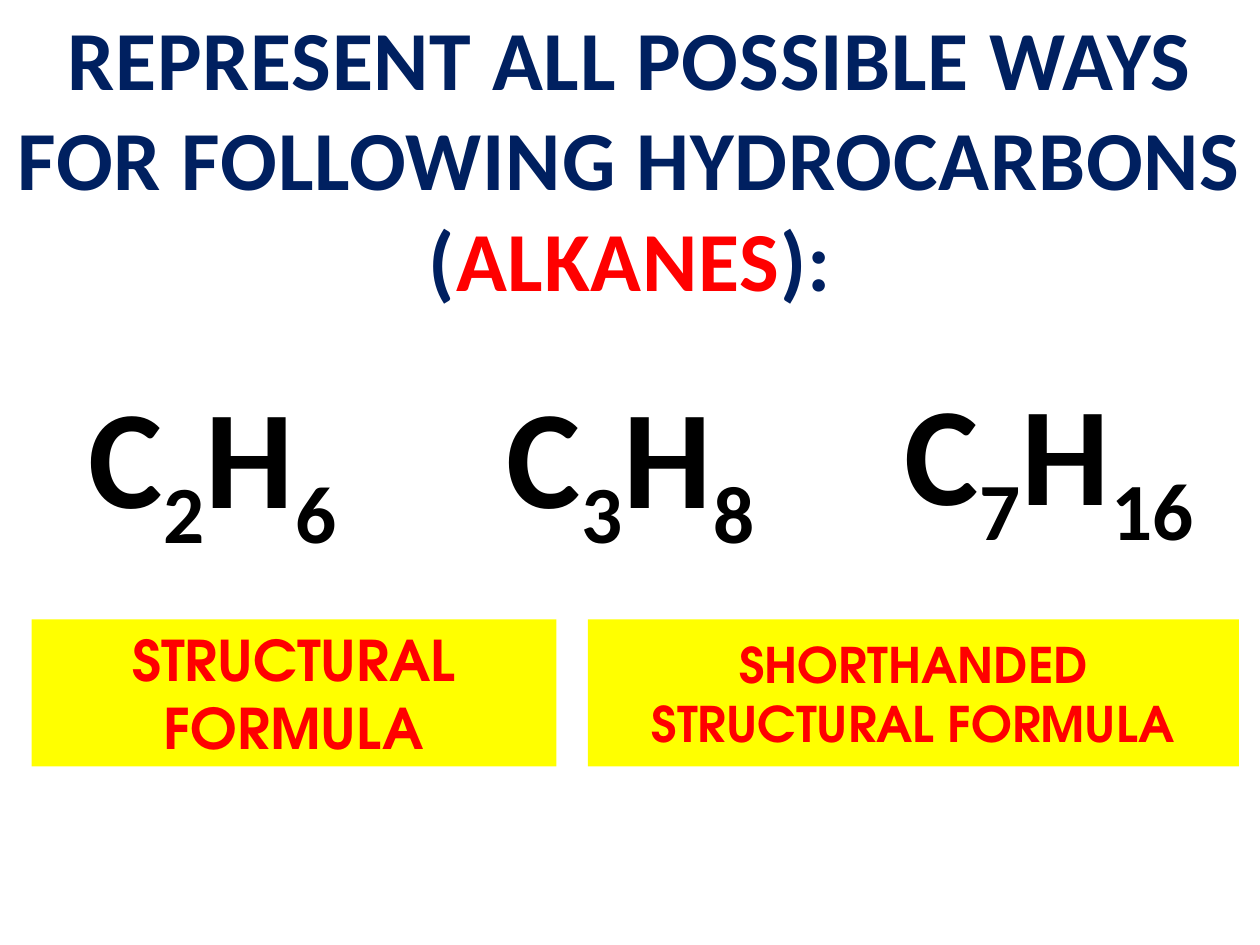
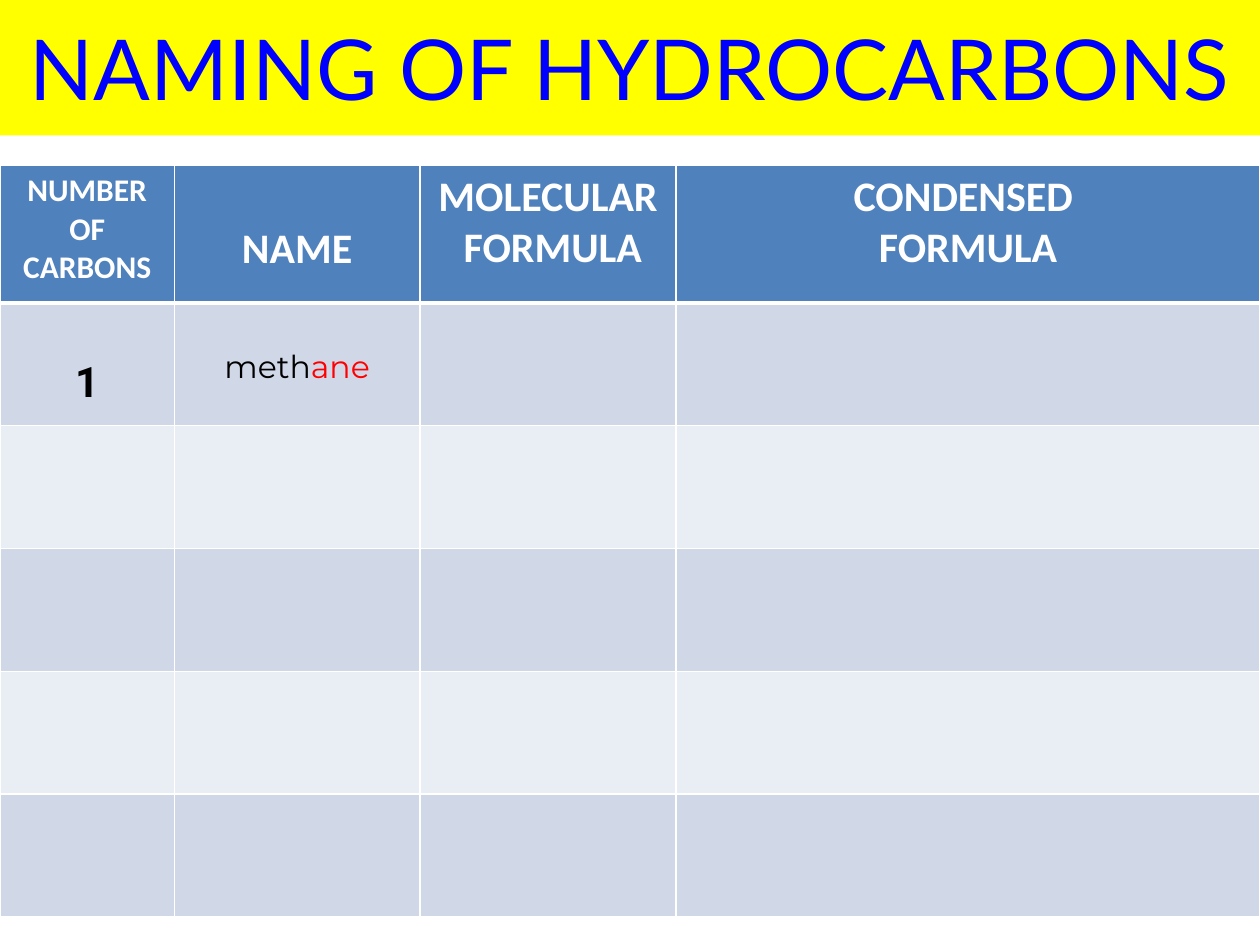
from lxml import etree
from pptx import Presentation
from pptx.dml.color import RGBColor
from pptx.enum.shapes import MSO_SHAPE
from pptx.enum.text import MSO_ANCHOR, MSO_AUTO_SIZE, PP_ALIGN
from pptx.oxml.ns import qn
from pptx.util import Inches, Pt

RECTANGLE = MSO_SHAPE.RECTANGLE
CENTER = PP_ALIGN.CENTER
MIDDLE = MSO_ANCHOR.MIDDLE
FIT_SHAPE = MSO_AUTO_SIZE.SHAPE_TO_FIT_TEXT

NAVY = RGBColor(0x00, 0x20, 0x60)
RED = RGBColor(0xFF, 0x00, 0x00)
BLUE = RGBColor(0x00, 0x00, 0xFF)
BLACK = RGBColor(0x00, 0x00, 0x00)
WHITE = RGBColor(0xFF, 0xFF, 0xFF)
YELLOW = RGBColor(0xFF, 0xFF, 0x00)
HEADER_BLUE = RGBColor(0x4F, 0x81, 0xBD)
BANDS = (RGBColor(0xD0, 0xD8, 0xE8), RGBColor(0xE9, 0xED, 0xF4))

BODY_FONT = "Calibri"
LABEL_FONT = "TeX Gyre Adventor"
BANNER_FONT = "Lato"
GRID_COLUMNS, GRID_ROWS = 120, 90


class Deck:
    """Hold the presentation, its grid and the slide being built."""

    def __init__(self):
        self.presentation = Presentation()
        self.presentation.slide_width = Inches(10)
        self.presentation.slide_height = Inches(7.5)
        self.slide = None

    def new_slide(self):
        self.slide = self.presentation.slides.add_slide(self.presentation.slide_layouts[6])

    def across(self, columns):
        return round(self.presentation.slide_width * columns / GRID_COLUMNS)

    def down(self, rows):
        return round(self.presentation.slide_height * rows / GRID_ROWS)

    def place(self, left, top, width, height):
        return self.across(left), self.down(top), self.across(width), self.down(height)

    def set_text(self, text_frame, lines, size, color, font=BODY_FONT, bold=True):
        text_frame.word_wrap = True
        for index, line in enumerate(lines):
            paragraph = text_frame.add_paragraph() if index else text_frame.paragraphs[0]
            paragraph.alignment = CENTER
            if isinstance(line, str):
                paragraph.text = line
            else:
                for piece in line:
                    paragraph.add_run().text = piece
            for run in paragraph.runs:
                run.font.name, run.font.size, run.font.bold = font, Pt(size), bold
                run.font.color.rgb = color

    def spaced_text(self, area, lines, size, color):
        box = self.slide.shapes.add_textbox(*self.place(*area))
        self.set_text(box.text_frame, lines, size, color)
        box.text_frame.auto_size = FIT_SHAPE
        for paragraph in box.text_frame.paragraphs:
            for run in paragraph.runs:
                run.font._element.set("spc", "50")
        return box.text_frame

    def formula(self, left, top, *pieces):
        text_frame = self.spaced_text((left, top, 36.5, 17.4), [pieces], 80, BLACK)
        for subscript in text_frame.paragraphs[0].runs[1::2]:
            subscript.font._element.set("baseline", "-25000")

    def panel(self, area, text, size, color, font, bold):
        shape = self.slide.shapes.add_shape(RECTANGLE, *self.place(*area))
        shape.shadow.inherit = False
        shape.fill.solid()
        shape.fill.fore_color.rgb = YELLOW
        shape.line.fill.background()
        shape.text_frame.vertical_anchor = MIDDLE
        self.set_text(shape.text_frame, [text], size, color, font, bold)

    def cell_borders(self, cell, bottom):
        properties = cell._tc.get_or_add_tcPr()
        sides = (("a:lnL", 1), ("a:lnR", 1), ("a:lnT", 1), ("a:lnB", bottom))
        for index, (tag, points) in enumerate(sides):
            line = etree.Element(qn(tag), w=str(Pt(points)))
            fill = etree.SubElement(line, qn("a:solidFill"))
            etree.SubElement(fill, qn("a:srgbClr"), val=str(WHITE))
            properties.insert(index, line)

    def table(self, area, widths, heights):
        frame = self.slide.shapes.add_table(len(heights), len(widths), *self.place(*area))
        table = frame.table
        for column, width in zip(table.columns, widths):
            column.width = self.across(width)
        for index, (row, height) in enumerate(zip(table.rows, heights)):
            row.height = self.down(height)
            for cell in row.cells:
                cell.fill.solid()
                cell.fill.fore_color.rgb = BANDS[(index - 1) % 2] if index else HEADER_BLUE
                self.cell_borders(cell, 1 if index else 3)
        return table


def build_alkanes(deck):
    deck.new_slide()
    title = deck.spaced_text(
        (0, 0, 120, 30.2),
        ["REPRESENT ALL POSSIBLE WAYS", ("FOR FOLLOWING HYDROCARBONS (", "ALKANES", "):")],
        48, NAVY)
    title.paragraphs[1].runs[1].font.color.rgb = RED
    deck.formula(41.8, 34.5, "C", "3", "H", "8")
    deck.formula(81.7, 34.2, "C", "7", "H", "16")
    deck.formula(2, 34.5, "C", "2", "H", "6")
    deck.panel((3, 59, 50, 14), "STRUCTURAL\vFORMULA", 32, RED, LABEL_FONT, True)
    deck.panel((56, 59, 62, 14), "SHORTHANDED STRUCTURAL FORMULA", 28, RED, LABEL_FONT, True)


def build_naming(deck):
    deck.new_slide()
    table = deck.table((0, 15.75, 120, 71.6), (16.6, 23.4, 24.4, 55.6), [13.1] + [11.7] * 5)
    headings = (
        (["NUMBER OF CARBONS"], 18),
        (["NAME"], 24),
        (["MOLECULAR", " FORMULA"], 24),
        (["CONDENSED ", "FORMULA"], 24),
    )
    for column, (lines, size) in enumerate(headings):
        deck.set_text(table.cell(0, column).text_frame, lines, size, WHITE)
    table.cell(0, 1).margin_top = Inches(0.46)

    count, name = table.cell(1, 0), table.cell(1, 1)
    count.margin_top, name.margin_top = Inches(0.44), Inches(0.36)
    deck.set_text(count.text_frame, ["1"], 24, BLACK, "Roboto")
    deck.set_text(name.text_frame, [("meth", "ane")], 18, BLACK, "Montserrat", False)
    name.text_frame.paragraphs[0].runs[1].font.color.rgb = RED

    deck.panel((0, -0.2, 120, 13.1), "NAMING OF HYDROCARBONS", 48, BLUE, BANNER_FONT, False)


def main():
    deck = Deck()
    build_alkanes(deck)
    build_naming(deck)
    deck.presentation.save("out.pptx")


if __name__ == "__main__":
    main()
